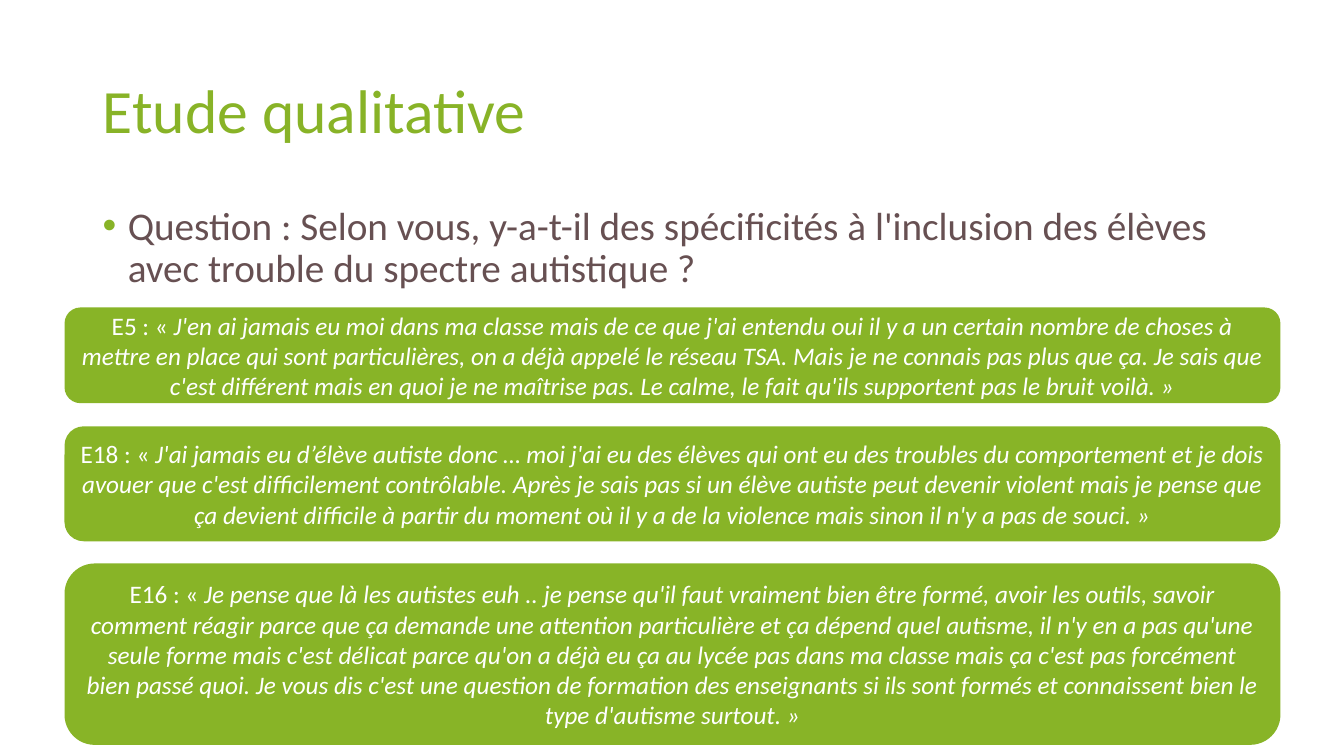
from lxml.etree import SubElement
from pptx import Presentation
from pptx.dml.color import RGBColor
from pptx.enum.shapes import MSO_SHAPE as Shape
from pptx.enum.text import MSO_ANCHOR as Anchor, MSO_AUTO_SIZE as AutoSize, PP_ALIGN as Align
from pptx.oxml.ns import qn
from pptx.util import Inches, Pt

TITLE = "Etude qualitative"
QUESTION = (
    "Question : Selon vous, y-a-t-il des spécificités à l'inclusion des élèves "
    "avec trouble du spectre autistique ?"
)
ANSWERS = [
    (3.05, 0.95, "E5 : « ",
     "J'en ai jamais eu moi dans ma classe mais de ce que j'ai entendu oui il y a un certain "
     "nombre de choses à mettre en place qui sont particulières, on a déjà appelé le réseau TSA. "
     "Mais je ne connais pas plus que ça. Je sais que c'est différent mais en quoi je ne maîtrise "
     "pas. Le calme, le fait qu'ils supportent pas le bruit voilà. »"),
    (4.23, 1.14, "E18 : «",
     " J'ai jamais eu d’élève autiste donc … moi j'ai eu des élèves qui ont eu des troubles du "
     "comportement et je dois avouer que c'est difficilement contrôlable. Après je sais pas si un "
     "élève autiste peut devenir violent mais je pense que ça devient difficile à partir du moment "
     "où il y a de la violence mais sinon il n'y a pas de souci. »"),
    (5.59, 1.8, "E16 : « ",
     "Je pense que là les autistes euh .. je pense qu'il faut vraiment bien être formé, avoir les "
     "outils, savoir comment réagir parce que ça demande une attention particulière et ça dépend "
     "quel autisme, il n'y en a pas qu'une seule forme mais c'est délicat parce qu'on a déjà eu ça "
     "au lycée pas dans ma classe mais ça c'est pas forcément bien passé quoi. Je vous dis c'est "
     "une question de formation des enseignants si ils sont formés et connaissent bien le type "
     "d'autisme surtout. »"),
]


def color(value):
    return RGBColor.from_string(value)


def apply(target, values):
    for name, value in values.items():
        setattr(target, name, value)


class InterviewPage:
    font = "Calibri"
    heading = "88B327"
    panel = "88B427"
    body = "675052"
    white = "FFFFFF"

    def __init__(self, deck):
        self.page = deck.slides.add_slide(deck.slide_layouts[5])

    def frame(self, box, anchor):
        apply(box.text_frame, {
            "word_wrap": True,
            "auto_size": AutoSize.NONE,
            "vertical_anchor": anchor,
        })
        return box.text_frame.paragraphs[0]

    def add_span(self, para, text, size, ink, italic=False):
        span = para.add_run()
        span.text = text
        apply(span.font, {"name": self.font, "size": Pt(size), "italic": italic})
        span.font.color.rgb = color(ink)

    def title(self, text, left, top, width, height):
        box = self.page.shapes.title
        apply(box, {"left": Inches(left), "top": Inches(top),
                    "width": Inches(width), "height": Inches(height)})
        para = self.frame(box, Anchor.MIDDLE)
        apply(para, {"alignment": Align.LEFT, "line_spacing": 0.9})
        self.add_span(para, text, 44, self.heading)

    def bullet(self, text, left, top, width, height):
        box = self.page.shapes.add_textbox(
            Inches(left), Inches(top), Inches(width), Inches(height))
        para = self.frame(box, Anchor.TOP)
        para.line_spacing = 0.9
        properties = para._p.get_or_add_pPr()
        properties.set("marL", str(Inches(0.25)))
        properties.set("indent", str(Inches(-0.25)))
        tint = SubElement(properties, qn("a:buClr"))
        SubElement(tint, qn("a:srgbClr")).set("val", self.heading)
        SubElement(properties, qn("a:buFont")).set("typeface", "Arial")
        SubElement(properties, qn("a:buChar")).set("char", "•")
        self.add_span(para, text, 28, self.body)

    def answer(self, speaker, quote, left, top, width, height):
        box = self.page.shapes.add_shape(
            Shape.ROUNDED_RECTANGLE,
            Inches(left), Inches(top), Inches(width), Inches(height))
        box.shadow.inherit = False
        box.fill.solid()
        box.fill.fore_color.rgb = color(self.panel)
        box.line.fill.background()
        para = self.frame(box, Anchor.MIDDLE)
        para.alignment = Align.CENTER
        self.add_span(para, speaker, 18, self.white)
        self.add_span(para, quote, 18, self.white, italic=True)


def main():
    deck = Presentation()
    apply(deck, {"slide_width": Inches(13.33), "slide_height": Inches(7.5)})
    interview = InterviewPage(deck)
    interview.title(TITLE, 0.92, 0.4, 11.5, 1.45)
    interview.bullet(QUESTION, 0.92, 2, 11.5, 4.76)
    for top, height, speaker, quote in ANSWERS:
        interview.answer(speaker, quote, 0.64, top, 12.06, height)
    deck.save("out.pptx")


if __name__ == "__main__":
    main()
